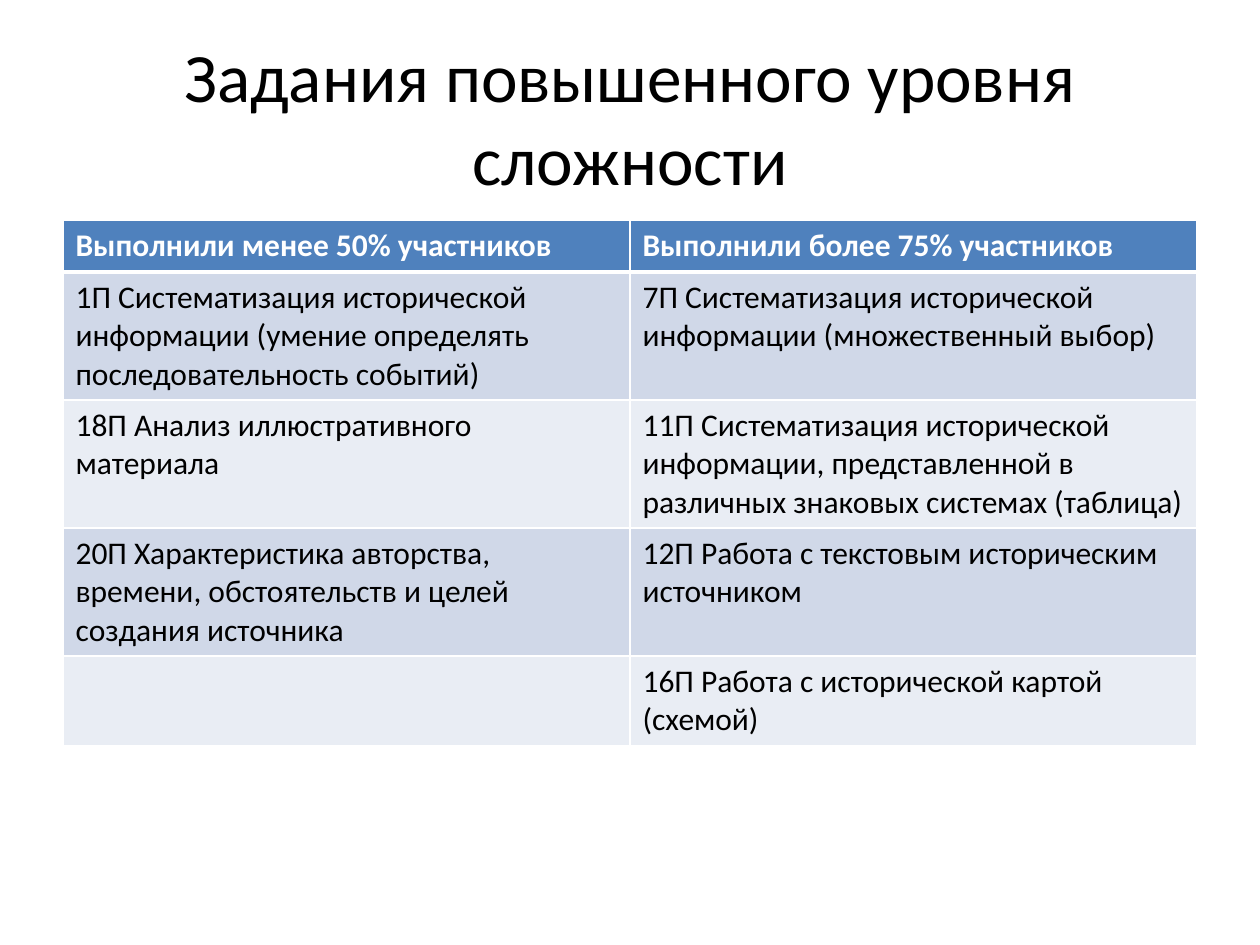
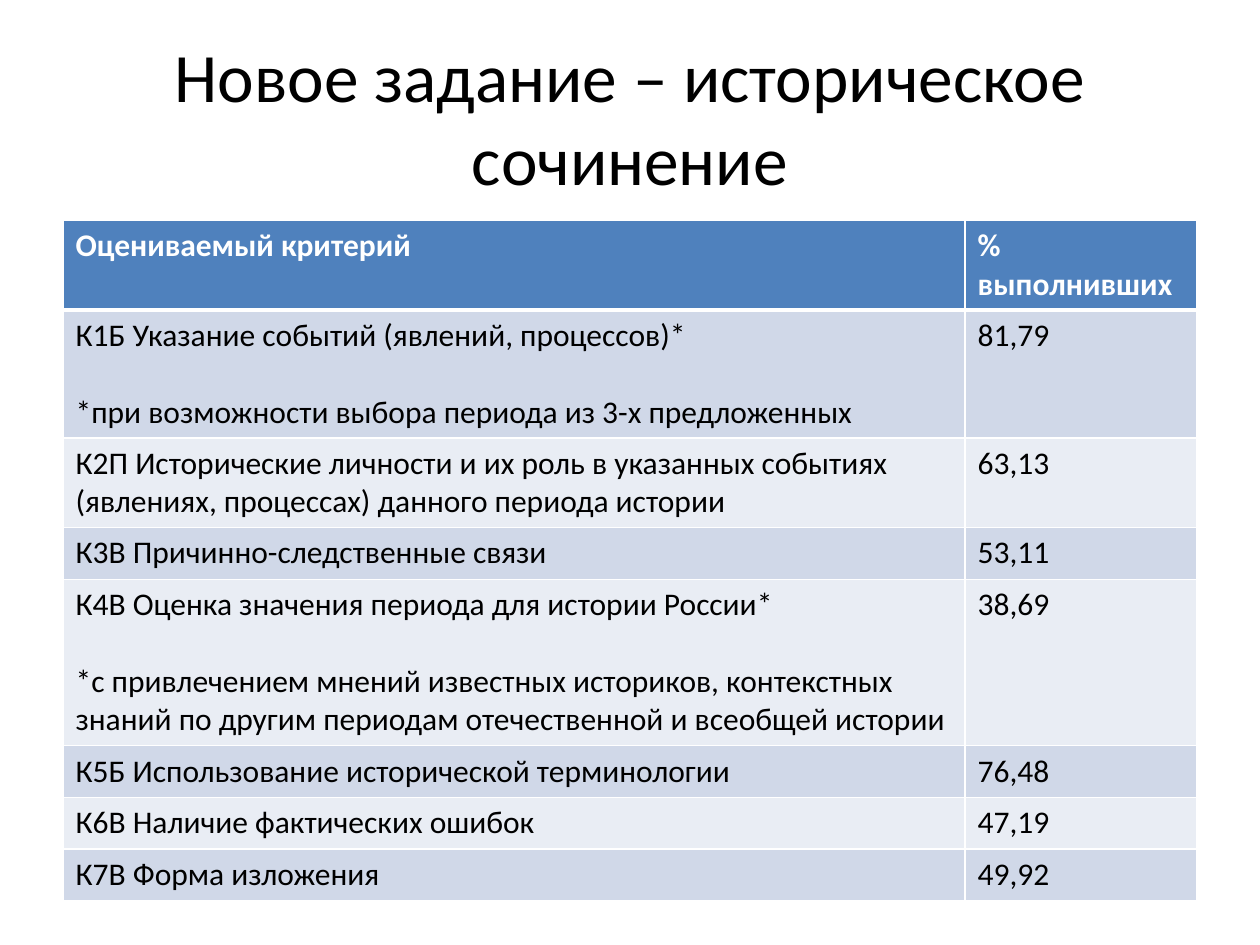
from dataclasses import dataclass

from lxml.etree import SubElement
from pptx import Presentation
from pptx.dml.color import RGBColor
from pptx.enum.text import MSO_ANCHOR, MSO_AUTO_SIZE, PP_ALIGN
from pptx.oxml.ns import qn
from pptx.util import Inches, Pt

SLIDES = [
    {
        "title": "Задания повышенного уровня сложности",
        "column_widths": (4.5, 4.5),
        "rows": [
            ("Выполнили менее 50% участников", "Выполнили более 75% участников"),
            ("1П Систематизация исторической информации (умение определять последовательность событий)",
             "7П Систематизация исторической информации (множественный выбор)"),
            ("18П Анализ иллюстративного материала",
             "11П Систематизация исторической информации, представленной в различных знаковых системах (таблица)"),
            ("20П Характеристика авторства, времени, обстоятельств и целей создания источника",
             "12П Работа с текстовым историческим источником"),
            ("", "16П Работа с исторической картой (схемой)"),
        ],
    },
    {
        "title": "Новое задание – историческое сочинение",
        "column_widths": (7.16, 1.84),
        "rows": [
            ("Оцениваемый критерий", "% выполнивших"),
            ("К1Б Указание событий (явлений, процессов)*\n"
             "*при возможности выбора периода из 3-х предложенных", "81,79"),
            ("К2П Исторические личности и их роль в указанных событиях "
             "(явлениях, процессах) данного периода истории", "63,13"),
            ("К3В Причинно-следственные связи", "53,11"),
            ("К4В Оценка значения периода для истории России*\n"
             "*с привлечением мнений известных историков, контекстных знаний "
             "по другим периодам отечественной и всеобщей истории", "38,69"),
            ("К5Б Использование исторической терминологии", "76,48"),
            ("К6В Наличие фактических ошибок", "47,19"),
            ("К7В Форма изложения", "49,92"),
        ],
    },
]


@dataclass(frozen=True)
class Theme:
    font: str = "Calibri"
    title_size: float = 39.6
    body_size: float = 18
    note_gap: float = 22
    text: str = "000000"
    header_text: str = "FFFFFF"
    header_fill: str = "4F81BD"
    band_fills: tuple = ("D0D8E8", "E9EDF4")
    border: str = "FFFFFF"
    border_width: float = 1
    header_rule_width: float = 3


THEME = Theme()
LEFT, WIDTH = 0.5, 9
TITLE_TOP, TITLE_HEIGHT = 0.3, 1.25
TABLE_TOP, ROW_HEIGHT = 1.75, 0.41


def add_run(paragraph, text, size, color, bold=False):
    run = paragraph.add_run()
    run.text = text
    run.font.name = THEME.font
    run.font.size = Pt(size)
    run.font.bold = bold
    run.font.color.rgb = RGBColor.from_string(color)


def set_title(slide, text):
    title = slide.shapes.title
    title.left, title.top = Inches(LEFT), Inches(TITLE_TOP)
    title.width, title.height = Inches(WIDTH), Inches(TITLE_HEIGHT)
    frame = title.text_frame
    frame.word_wrap = True
    frame.auto_size = MSO_AUTO_SIZE.NONE
    frame.vertical_anchor = MSO_ANCHOR.MIDDLE
    paragraph = frame.paragraphs[0]
    paragraph.alignment = PP_ALIGN.CENTER
    add_run(paragraph, text, THEME.title_size, THEME.text)


def set_borders(cell, row_index):
    properties = cell._tc.get_or_add_tcPr()
    widths = {
        "a:lnL": THEME.border_width,
        "a:lnR": THEME.border_width,
        "a:lnT": THEME.header_rule_width if row_index == 1 else THEME.border_width,
        "a:lnB": THEME.header_rule_width if row_index == 0 else THEME.border_width,
    }
    for tag, width in widths.items():
        line = SubElement(properties, qn(tag), w=str(Pt(width)))
        fill = SubElement(line, qn("a:solidFill"))
        SubElement(fill, qn("a:srgbClr"), val=THEME.border)


def fill_cell(cell, text, row_index):
    is_header = row_index == 0
    set_borders(cell, row_index)
    cell.fill.solid()
    fill = THEME.header_fill if is_header else THEME.band_fills[(row_index - 1) % 2]
    cell.fill.fore_color.rgb = RGBColor.from_string(fill)
    if not text:
        return
    color = THEME.header_text if is_header else THEME.text
    frame = cell.text_frame
    for index, line in enumerate(text.split("\n")):
        paragraph = frame.add_paragraph() if index else frame.paragraphs[0]
        if index:
            paragraph.space_before = Pt(THEME.note_gap)
        add_run(paragraph, line, THEME.body_size, color, is_header)


def add_results_table(slide, rows, column_widths):
    table = slide.shapes.add_table(
        len(rows), len(column_widths), Inches(LEFT), Inches(TABLE_TOP),
        Inches(WIDTH), Inches(ROW_HEIGHT * len(rows))).table
    for column, width in zip(table.columns, column_widths):
        column.width = Inches(width)
    for row_index, texts in enumerate(rows):
        for column_index, text in enumerate(texts):
            fill_cell(table.cell(row_index, column_index), text, row_index)


def main():
    presentation = Presentation()
    presentation.slide_width, presentation.slide_height = Inches(10), Inches(7.5)
    title_only = presentation.slide_layouts.get_by_name("Title Only")
    for content in SLIDES:
        slide = presentation.slides.add_slide(title_only)
        set_title(slide, content["title"])
        add_results_table(slide, content["rows"], content["column_widths"])
    presentation.save("out.pptx")


if __name__ == "__main__":
    main()
